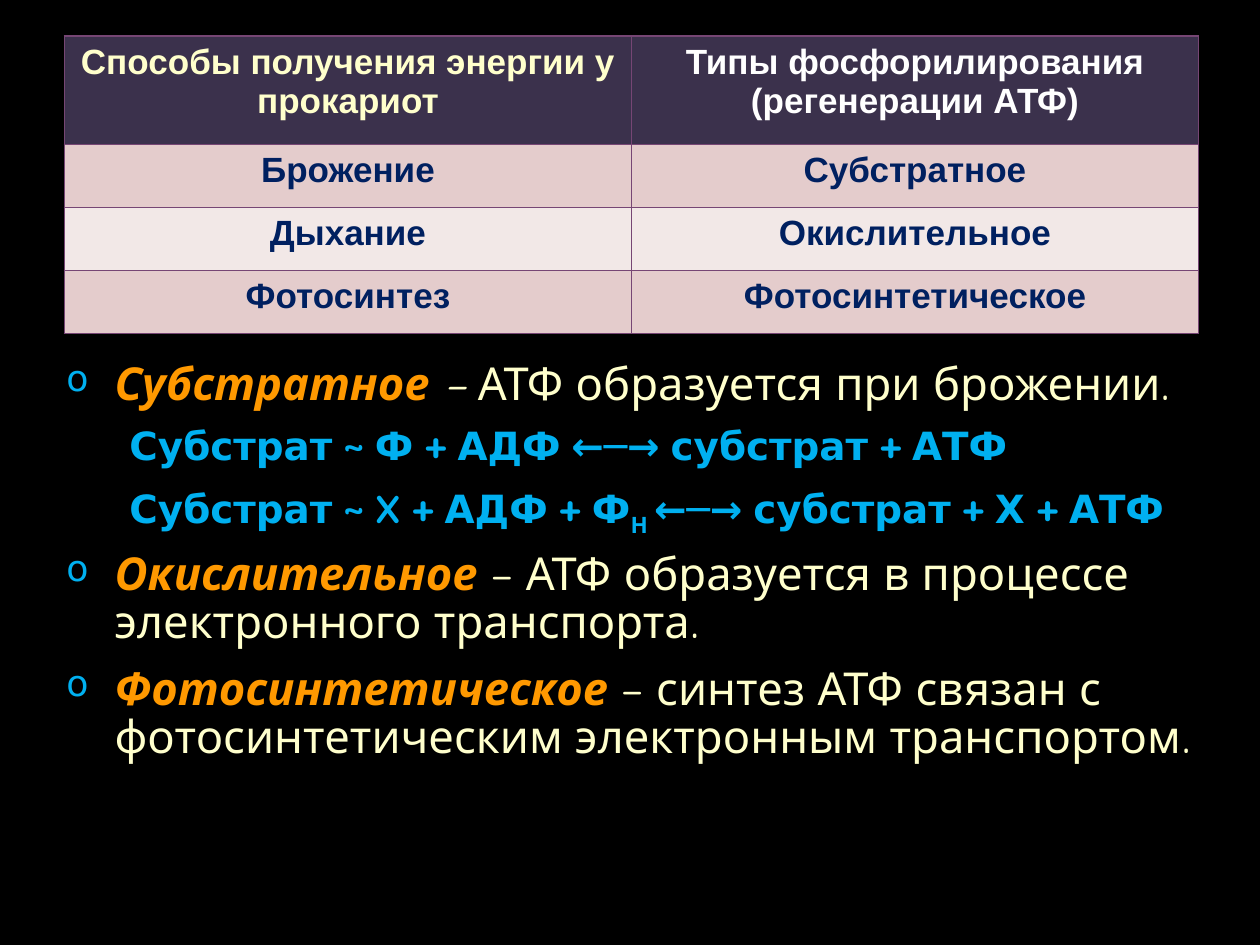
"""Build a slide on how prokaryotes obtain energy and the types of phosphorylation."""
from lxml import etree
from pptx import Presentation
from pptx.dml.color import RGBColor
from pptx.enum.text import PP_ALIGN
from pptx.oxml.ns import qn
from pptx.util import Cm, Pt

CENTER = PP_ALIGN.CENTER

THEME = {
    "back": "000000", "head": "3B314C", "bands": ("E4CCCC", "F2E8E7"),
    "border": "764674", "cell": "002060", "heads": ("FFFFCC", "FFFFFF"),
    "accent": "00B0F0", "term": "FF9900", "body": "FFFFCC",
    "table_font": "Arial", "text_font": "Quicksand",
    "table_size": 20, "text_size": 25.9, "formula_size": 22.2,
}

ROWS = [
    ("Способы получения энергии у прокариот", "Типы фосфорилирования (регенерации АТФ)"),
    ("Брожение", "Субстратное"),
    ("Дыхание", "Окислительное"),
    ("Фотосинтез", "Фотосинтетическое"),
]
ROW_HEIGHTS = (2.18, 1.27, 1.27, 1.27)
COLUMN_WIDTH = 11.43

STYLES = {
    "term": dict(size=THEME["text_size"], color=THEME["term"], bold=True, italic=True),
    "dash": dict(size=THEME["text_size"], color=THEME["body"], italic=True),
    "body": dict(size=THEME["text_size"], color=THEME["body"]),
    "formula": dict(size=THEME["formula_size"], color=THEME["accent"], bold=True),
    "sub": dict(size=THEME["formula_size"], color=THEME["accent"], bold=True, baseline=-25),
}
PARAGRAPHS = [
    ("bullet", [("Субстратное ", "term"), ("– ", "dash"),
                ("АТФ образуется при брожении.", "body")]),
    ("formula", [("Субстрат ~ Ф + АДФ ←─→ субстрат + АТФ", "formula")]),
    ("formula", [("Субстрат ~ X + АДФ + Ф", "formula"), ("Н ", "sub"),
                 ("←─→ субстрат + Х + АТФ", "formula")]),
    ("bullet", [("Окислительное ", "term"),
                ("– АТФ образуется в процессе электронного транспорта.", "body")]),
    ("bullet", [("Фотосинтетическое ", "term"),
                ("– синтез АТФ связан с фотосинтетическим электронным транспортом.", "body")]),
]
LAYOUT = {
    "bullet": dict(left=0.97, indent=-0.97, before=11),
    "formula": dict(left=1.27, indent=0, before=10),
}


def rgb(color):
    """Turn a hex string into a colour."""
    return RGBColor.from_string(color)


def add_run(p, text, font, size, color, bold=False, italic=False, baseline=0):
    """Add one formatted run to a paragraph."""
    r = p.add_run()
    r.text = text
    r.font.name, r.font.size = font, Pt(size)
    r.font.bold, r.font.italic = bold, italic
    r.font.color.rgb = rgb(color)
    if baseline:
        r.font._element.set("baseline", str(baseline * 1000))


def add_bullet(p):
    """Give a paragraph a round coloured bullet."""
    pPr = p._p.get_or_add_pPr()
    color = etree.SubElement(pPr, qn("a:buClr"))
    etree.SubElement(color, qn("a:srgbClr"), val=THEME["accent"])
    etree.SubElement(pPr, qn("a:buSzPct"), val="80000")
    etree.SubElement(pPr, qn("a:buChar"), char="o")


def add_borders(cell):
    """Draw a thin line on each side of a cell."""
    tcPr = cell._tc.get_or_add_tcPr()
    for i, side in enumerate(("a:lnL", "a:lnR", "a:lnT", "a:lnB")):
        line = etree.Element(qn(side), w=str(Pt(1)))
        fill = etree.SubElement(line, qn("a:solidFill"))
        etree.SubElement(fill, qn("a:srgbClr"), val=THEME["border"])
        tcPr.insert(i, line)


def add_energy_table(s):
    """Add the table that pairs energy sources with phosphorylation types."""
    table = s.shapes.add_table(len(ROWS), 2, Cm(1.3), Cm(0.73),
                               Cm(2 * COLUMN_WIDTH), Cm(sum(ROW_HEIGHTS))).table
    for column in table.columns:
        column.width = Cm(COLUMN_WIDTH)
    for i, (texts, height) in enumerate(zip(ROWS, ROW_HEIGHTS)):
        table.rows[i].height = Cm(height)
        for j, text in enumerate(texts):
            cell = table.cell(i, j)
            cell.fill.solid()
            cell.fill.fore_color.rgb = rgb(THEME["bands"][(i - 1) % 2] if i else THEME["head"])
            add_borders(cell)
            p = cell.text_frame.paragraphs[0]
            p.alignment = CENTER
            add_run(p, text, THEME["table_font"], THEME["table_size"],
                    THEME["cell"] if i else THEME["heads"][j], bold=True)


def add_explanations(s):
    """Add the bulleted explanations with their formulas."""
    tf = s.shapes.add_textbox(Cm(1.09), Cm(7.18), Cm(23.39), Cm(11.57)).text_frame
    tf.word_wrap = True
    for i, (kind, runs) in enumerate(PARAGRAPHS):
        p = tf.add_paragraph() if i else tf.paragraphs[0]
        layout = LAYOUT[kind]
        pPr = p._p.get_or_add_pPr()
        pPr.set("marL", str(Cm(layout["left"])))
        pPr.set("indent", str(Cm(layout["indent"])))
        if kind == "bullet":
            add_bullet(p)
        p.line_spacing = 0.88
        p.space_before = Pt(layout["before"] if i else 0)
        for text, style in runs:
            add_run(p, text, THEME["text_font"], **STYLES[style])


def main():
    """Build and save the presentation."""
    prs = Presentation()
    prs.slide_width, prs.slide_height = Cm(25.4), Cm(19.05)
    s = prs.slides.add_slide(prs.slide_layouts[6])
    s.background.fill.solid()
    s.background.fill.fore_color.rgb = rgb(THEME["back"])
    add_energy_table(s)
    add_explanations(s)
    prs.save("out.pptx")


if __name__ == "__main__":
    main()
